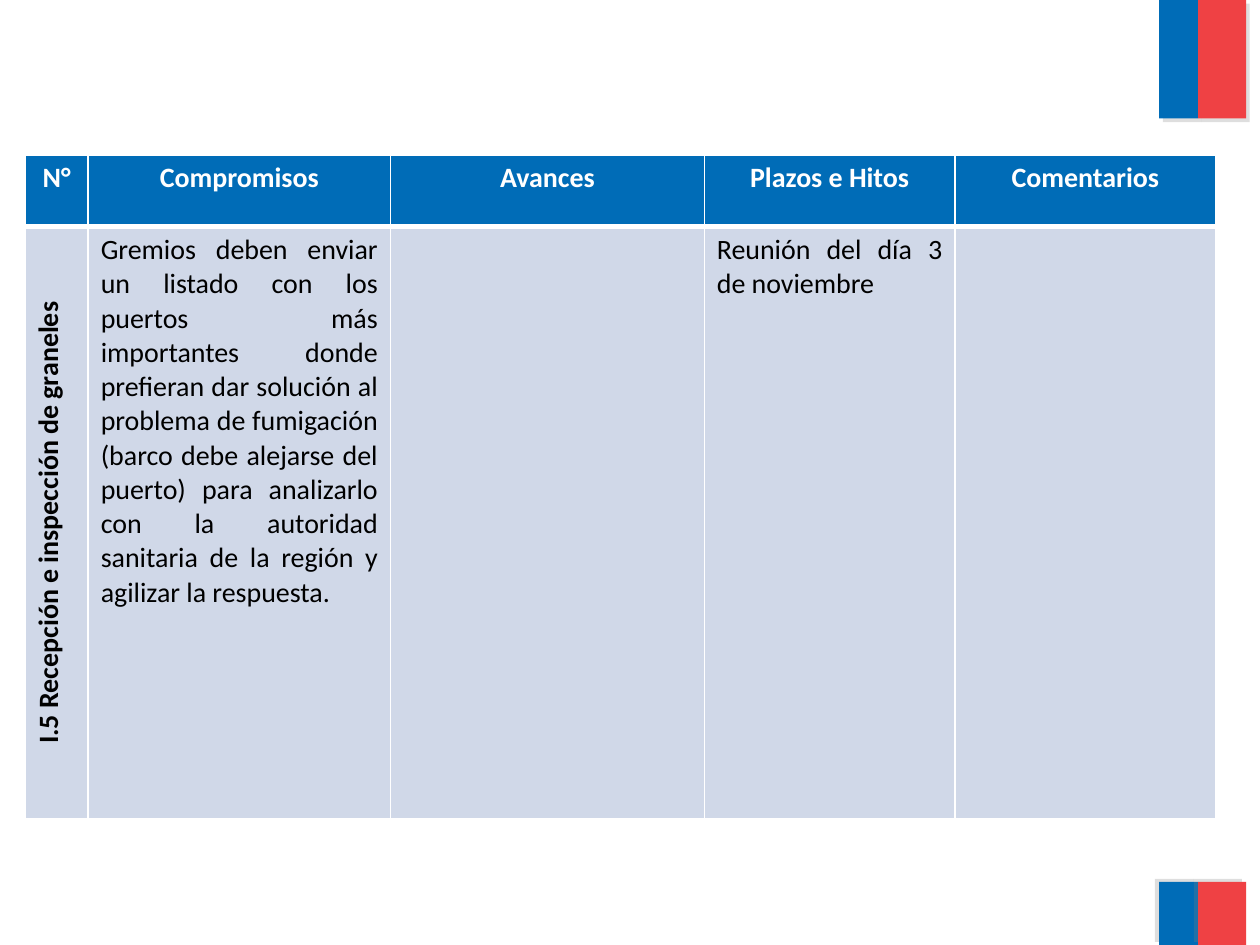
import pptx
import pptx.dml.color
import pptx.enum.shapes
import pptx.enum.text
import pptx.oxml
import pptx.oxml.ns
import pptx.util

Inches = pptx.util.Inches
Pt = pptx.util.Pt
ALIGN = pptx.enum.text.PP_ALIGN
NS = pptx.oxml.ns.nsdecls("a")

BLUE, RED, PALE = "006CB7", "EF4144", "D0D8E8"
WHITE, BLACK, GREY = "FFFFFF", "000000", "808080"

WIDTHS = [0.5, 2.4, 2.49, 1.99, 2.07]
HEIGHTS = [0.57, 4.7]
HEADS = ["N°", "Compromisos", "Avances", "Plazos e Hitos", "Comentarios"]
TOPIC = "I.5 Recepción e inspección de graneles"
PLEDGE = (
    "Gremios deben enviar un listado con los puertos más importantes donde "
    "prefieran dar solución al problema de fumigación (barco debe alejarse del "
    "puerto) para analizarlo con la autoridad sanitaria de la región y agilizar "
    "la respuesta."
)
DATE = "Reunión del día 3 de noviembre"


def color(code):
    return pptx.dml.color.RGBColor.from_string(code)


class Deck:
    """Holds the text style and the current slide."""

    font = "Calibri"
    size = 16

    def __init__(self, wide, high):
        self.file = pptx.Presentation()
        self.file.slide_width = Inches(wide)
        self.file.slide_height = Inches(high)
        self.slide = self.file.slides.add_slide(self.file.slide_layouts[6])

    def bar(self, box, fill, angle):
        """Add a plain rectangle with a hard shadow cast at an angle in degrees."""
        kind = pptx.enum.shapes.MSO_SHAPE.RECTANGLE
        shape = self.slide.shapes.add_shape(kind, *map(Inches, box))
        shape.fill.solid()
        shape.fill.fore_color.rgb = color(fill)
        shape.line.fill.background()
        shape._element.spPr.append(pptx.oxml.parse_xml(
            f'<a:effectLst {NS}><a:outerShdw blurRad="0" dist="{Pt(3)}" '
            f'dir="{angle * 60000}" algn="ctr" rotWithShape="0">'
            f'<a:srgbClr val="{GREY}"><a:alpha val="25000"/></a:srgbClr>'
            '</a:outerShdw></a:effectLst>'))

    def table(self, left, top, widths, heights):
        frame = self.slide.shapes.add_table(
            len(heights), len(widths), Inches(left), Inches(top),
            Inches(sum(widths)), Inches(sum(heights)))
        grid = frame.table
        for col, wide in zip(grid.columns, widths):
            col.width = Inches(wide)
        for row, high in zip(grid.rows, heights):
            row.height = Inches(high)
        return grid

    def cell(self, cell, text, fill, ink, align, bold=False, edges=(1, 1, 1, 1)):
        """Fill in one cell; edges are the left, right, top and bottom widths."""
        props = cell._tc.get_or_add_tcPr()
        for side, width in zip("LRTB", edges):
            props.append(pptx.oxml.parse_xml(
                f'<a:ln{side} {NS} w="{Pt(width)}"><a:solidFill>'
                f'<a:srgbClr val="{WHITE}"/></a:solidFill></a:ln{side}>'))
        cell.fill.solid()
        cell.fill.fore_color.rgb = color(fill)
        cell.text_frame.text = text
        para = cell.text_frame.paragraphs[0]
        para.alignment = align
        for font in [para.font] + [run.font for run in para.runs]:
            font.name = self.font
            font.size = Pt(self.size)
            font.bold = bold
            font.color.rgb = color(ink)


def main():
    deck = Deck(10, 7.5)
    for top, high, angle in [(0, 0.94, 45), (7, 0.5, 215)]:
        deck.bar((9.2, top, 0.31, high), BLUE, angle)
        deck.bar((9.51, top, 0.38, high), RED, angle)

    grid = deck.table(0.2, 1.23, WIDTHS, HEIGHTS)
    for col, head in enumerate(HEADS):
        deck.cell(grid.cell(0, col), head, BLUE, WHITE, ALIGN.CENTER,
                  bold=True, edges=(1, 1, 1, 3))
    topic = grid.cell(1, 0)
    deck.cell(topic, TOPIC, PALE, BLACK, ALIGN.CENTER, bold=True)
    topic._tc.get_or_add_tcPr().set("vert", "vert270")
    for col, text in enumerate([PLEDGE, "", DATE, ""], start=1):
        deck.cell(grid.cell(1, col), text, PALE, BLACK, ALIGN.JUSTIFY,
                  edges=(1, 1, 3, 1))

    deck.file.save("out.pptx")


if __name__ == "__main__":
    main()
